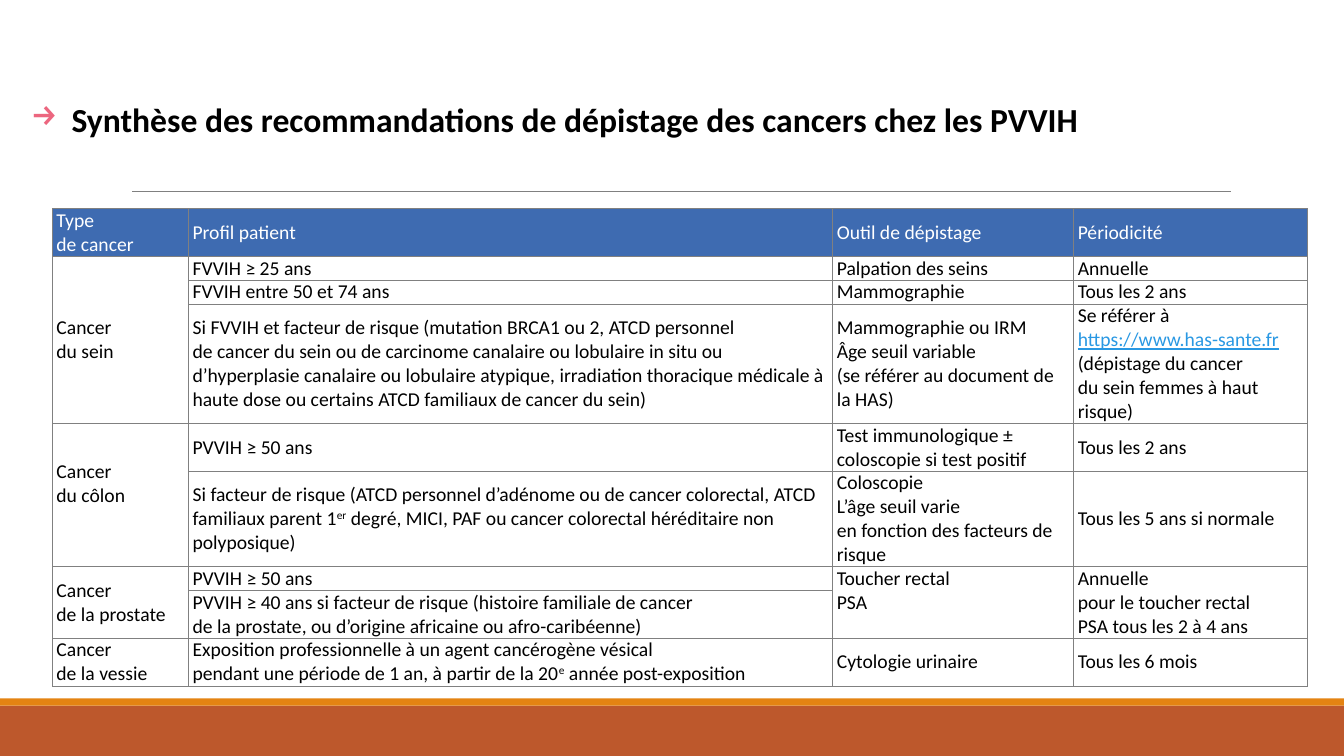
import pptx
import pptx.dml.color
import pptx.enum.shapes
import pptx.enum.text
import pptx.oxml
import pptx.oxml.ns
import pptx.util
from pptx.util import Inches

FONT = "Calibri"
BLACK, WHITE, GREY = "000000", "FFFFFF", "808080"
HEADER_BLUE, LINK_BLUE, BULLET_PINK = "3E6BB1", "2998E3", "EC667F"
ORANGE, RUST = "E48312", "BD582C"

COLUMNS = [1.35, 6.39, 2.39, 2.32]
ROWS = [0.47, 0.23, 0.23, 1.17, 0.47, 0.93, 0.23, 0.47, 0.47]

# "\n" starts a paragraph, "\v" breaks a line, ^...^ marks a link or superscript;
# None continues the cell above
CELLS = [
    ["Type\vde cancer", "Profil patient", "Outil de dépistage", "Périodicité"],
    ["Cancer\vdu sein", "FVVIH ≥ 25 ans", "Palpation des seins", "Annuelle"],
    [None, "FVVIH entre 50 et 74 ans", "Mammographie", "Tous les 2 ans"],
    [None,
     "Si FVVIH et facteur de risque (mutation BRCA1 ou 2, ATCD personnel\v"
     "de cancer du sein ou de carcinome canalaire ou lobulaire in situ ou "
     "d’hyperplasie canalaire ou lobulaire atypique, irradiation thoracique "
     "médicale à haute dose ou certains ATCD familiaux de cancer du sein)",
     "Mammographie ou IRM\nÂge seuil variable\v(se référer au document de la HAS)",
     "Se référer à\n^https://www.has-sante.fr^ (dépistage du cancer\v"
     "du sein femmes à haut risque)"],
    ["Cancer\vdu côlon", "PVVIH ≥ 50 ans",
     "Test immunologique ± coloscopie si test positif", "Tous les 2 ans"],
    [None,
     "Si facteur de risque (ATCD personnel d’adénome ou de cancer colorectal, "
     "ATCD familiaux parent 1^er^ degré, MICI, PAF ou cancer colorectal "
     "héréditaire non polyposique)",
     "Coloscopie\nL’âge seuil varie\ven fonction des facteurs de risque",
     "Tous les 5 ans si normale"],
    ["Cancer\vde la prostate", "PVVIH ≥ 50 ans", "Toucher rectal\nPSA",
     "Annuelle\vpour le toucher rectal\nPSA tous les 2 à 4 ans"],
    [None,
     "PVVIH ≥ 40 ans si facteur de risque (histoire familiale de cancer\v"
     "de la prostate, ou d’origine africaine ou afro-caribéenne)", None, None],
    ["Cancer\vde la vessie",
     "Exposition professionnelle à un agent cancérogène vésical\v"
     "pendant une période de 1 an, à partir de la 20^e^ année post-exposition",
     "Cytologie urinaire", "Tous les 6 mois"],
]
# Cells whose text sits one line higher: (row, column)
RAISED = {(4, 0), (6, 2)}


def rgb(value):
    return pptx.dml.color.RGBColor.from_string(value)


def xml(body):
    tag, rest = body[1:].split(" ", 1)
    return pptx.oxml.parse_xml(f"<{tag} {pptx.oxml.ns.nsdecls('a')} {rest}")


class Deck:
    def __init__(self, width, height):
        self.prs = pptx.Presentation()
        self.prs.slide_width, self.prs.slide_height = Inches(width), Inches(height)
        self.s = self.prs.slides.add_slide(self.prs.slide_layouts[5])

    def style(self, r, size, color, bold=False):
        r.font.name, r.font.size, r.font.bold = FONT, pptx.util.Pt(size), bold
        r.font.color.rgb = rgb(color)

    def title(self, text, x, y, w, h):
        sp = self.s.shapes.title
        sp.left, sp.top, sp.width, sp.height = map(Inches, (x, y, w, h))
        tf = sp.text_frame
        tf.text = text
        tf.word_wrap = True
        tf.auto_size = pptx.enum.text.MSO_AUTO_SIZE.NONE
        tf.vertical_anchor = pptx.enum.text.MSO_ANCHOR.TOP
        tf.margin_left = tf.margin_right = tf.margin_top = tf.margin_bottom = 0
        p = tf.paragraphs[0]
        p.alignment = pptx.enum.text.PP_ALIGN.LEFT
        p.line_spacing = 0.9
        p.space_before, p.space_after = pptx.util.Pt(12), pptx.util.Pt(2)
        self.style(p.runs[0], 24, BLACK, bold=True)
        pPr = p._p.get_or_add_pPr()
        pPr.set("marL", str(Inches(0.4)))
        pPr.set("indent", str(Inches(-0.4)))
        pPr.append(xml(f'<a:buClr ><a:srgbClr val="{BULLET_PINK}"/></a:buClr>'))
        pPr.append(xml('<a:buChar char="→"/>'))

    def bar(self, y, h, color):
        sp = self.s.shapes.add_shape(pptx.enum.shapes.MSO_SHAPE.RECTANGLE,
                                     0, Inches(y), self.prs.slide_width, Inches(h))
        sp.shadow.inherit = False
        sp.fill.solid()
        sp.fill.fore_color.rgb = rgb(color)
        sp.line.fill.background()

    def rule(self, x1, x2, y):
        line = self.s.shapes.add_connector(pptx.enum.shapes.MSO_CONNECTOR.STRAIGHT,
                                           Inches(x1), Inches(y), Inches(x2), Inches(y))
        line.line.color.rgb = rgb(GREY)
        line.line.width = pptx.util.Pt(0.5)
        line._element.spPr.append(xml("<a:effectLst />"))

    def paragraph(self, p, text, color):
        for i, part in enumerate(text.split("^")):
            for j, piece in enumerate(part.split("\v")):
                if j:
                    p.add_line_break()
                r = p.add_run()
                r.text = piece
                self.style(r, 14, color)
                if i % 2 and piece.startswith("http"):
                    r.font.color.rgb = rgb(LINK_BLUE)
                    r.font.underline = True
                elif i % 2:
                    r.font._element.set("baseline", "30000")
        for br in p._p.findall(pptx.oxml.ns.qn("a:br")):
            br.append(xml('<a:rPr sz="1400"/>'))

    def cell(self, cell, text, fill, color, raised):
        tcPr = cell._tc.get_or_add_tcPr()
        for side in "LRTB":
            tcPr.append(xml(f'<a:ln{side} w="9525"><a:solidFill><a:srgbClr val="{GREY}"/>'
                            f'</a:solidFill></a:ln{side}>'))
        cell.fill.solid()
        cell.fill.fore_color.rgb = rgb(fill)
        cell.vertical_anchor = pptx.enum.text.MSO_ANCHOR.MIDDLE
        cell.margin_left = cell.margin_right = Inches(0.04)
        cell.margin_top = 0
        cell.margin_bottom = Inches(0.23 if raised else 0)
        if text is None:
            return
        tf = cell.text_frame
        for i, line in enumerate(text.split("\n")):
            p = tf.add_paragraph() if i else tf.paragraphs[0]
            self.paragraph(p, line, color)

    def table(self, x, y, columns, rows, cells):
        frame = self.s.shapes.add_table(len(rows), len(columns), Inches(x), Inches(y),
                                        Inches(sum(columns)), Inches(sum(rows)))
        table = frame.table
        for column, width in zip(table.columns, columns):
            column.width = Inches(width)
        for row, height in zip(table.rows, rows):
            row.height = Inches(height)
        for i, texts in enumerate(cells):
            fill, color = (WHITE, BLACK) if i else (HEADER_BLUE, WHITE)
            for j, text in enumerate(texts):
                self.cell(table.cell(i, j), text, fill, color, (i, j) in RAISED)
        # Merge each cell with the continuations below it
        for j in range(len(columns)):
            starts = [i for i in range(len(rows)) if cells[i][j] is not None]
            for first, following in zip(starts, starts[1:] + [len(rows)]):
                if following - first > 1:
                    table.cell(first, j).merge(table.cell(following - 1, j))


def main():
    deck = Deck(13.33, 7.5)
    # Footer bands and rule
    deck.bar(7, 0.5, RUST)
    deck.bar(6.93, 0.07, ORANGE)
    deck.rule(1.31, 12.21, 1.9)
    # Title
    deck.title("Synthèse des recommandations de dépistage des cancers chez les PVVIH",
               0.31, 1.03, 12.71, 0.93)
    # Screening table
    deck.table(0.52, 2.07, COLUMNS, ROWS, CELLS)
    deck.prs.save("out.pptx")


if __name__ == "__main__":
    main()
